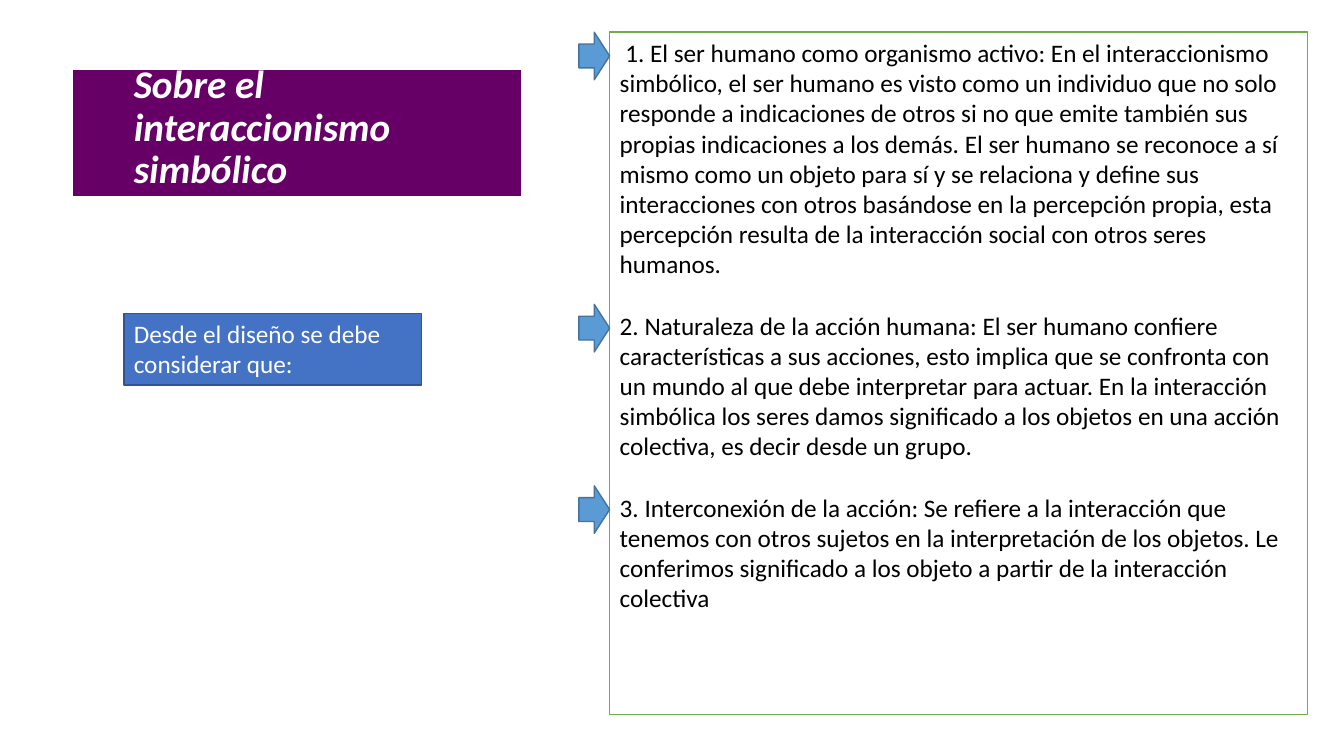
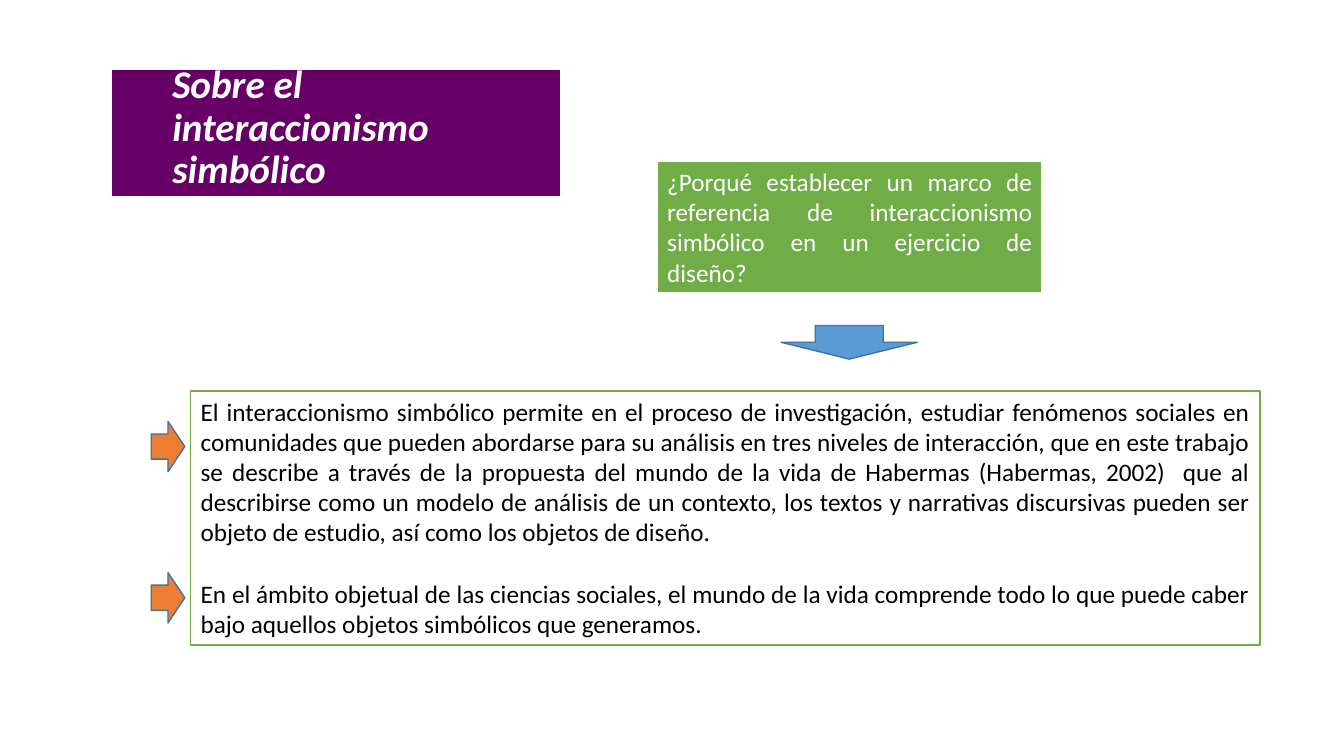
import pptx
import pptx.util
import pptx.dml.color
import pptx.enum.shapes
import pptx.enum.text

Pt = pptx.util.Pt
Kind = pptx.enum.shapes.MSO_SHAPE
Align = pptx.enum.text.PP_ALIGN
Anchor = pptx.enum.text.MSO_ANCHOR


class Theme:
    font = "Calibri"
    head, body = 28, 18
    white, black = "FFFFFF", "000000"
    purple, green = "660066", "70AD47"
    blue, navy = "4472C4", "325491"
    sky, steel, orange = "5B9BD5", "43739E", "ED7D31"
    gap = 22  # one text line between paragraphs


# Content: boxes are (left, top, width, height) in points
TITLE = "Sobre el interaccionismo simbólico"
SLIDES = [
    {
        "left": 52.5,
        "panel": (435.6, 23, 498.4, 487.5),
        "align": Align.LEFT,
        "indent": 4,
        "text": [
            "1. El ser humano como organismo activo: En el interaccionismo simbólico, el ser humano es visto como un individuo que no solo responde a indicaciones de otros si no que emite también sus propias indicaciones a los demás. El ser humano se reconoce a sí mismo como un objeto para sí y se relaciona y define sus interacciones con otros basándose en la percepción propia, esta percepción resulta de la interacción social con otros seres humanos.",
            "2. Naturaleza de la acción humana: El ser humano confiere características a sus acciones, esto implica que se confronta con un mundo al que debe interpretar para actuar. En la interacción simbólica los seres damos significado a los objetos en una acción colectiva, es decir desde un grupo.",
            "3. Interconexión de la acción: Se refiere a la interacción que tenemos con otros sujetos en la interpretación de los objetos. Le conferimos significado a los objeto a partir de la interacción colectiva",
        ],
        "note": "Desde el diseño se debe considerar que:",
        "place": (88.5, 224, 212.4, 51),
        "fill": Theme.blue,
        "edge": (Theme.navy, 1),
        "marks": [(413.5, top, 22, 34) for top in (23, 217.4, 347)],
        "tint": Theme.sky,
    },
    {
        "left": 80,
        "panel": (136.2, 279.2, 763.8, 181.6),
        "align": Align.JUSTIFY,
        "indent": 0,
        "text": [
            "El interaccionismo simbólico permite en el proceso de investigación, estudiar fenómenos sociales en comunidades que pueden abordarse para su análisis en tres niveles de interacción, que en este trabajo se describe a través de la propuesta del mundo de la vida de Habermas (Habermas, 2002)  que al describirse como un modelo de análisis de un contexto, los textos y narrativas discursivas pueden ser objeto de estudio, así como los objetos de diseño.",
            "En el ámbito objetual de las ciencias sociales, el mundo de la vida comprende todo lo que puede caber bajo aquellos objetos simbólicos que generamos.",
        ],
        "note": "¿Porqué establecer un marco de referencia de interaccionismo simbólico en un ejercicio de diseño?",
        "place": (469.5, 115.2, 275, 94),
        "fill": Theme.green,
        "edge": (Theme.white, 1.5),
        "marks": [(108, top, 24, 36) for top in (301, 409)],
        "tint": Theme.orange,
        "down": (558, 232.5, 97.2, 24),
    },
]


def tone(code):
    return pptx.dml.color.RGBColor.from_string(code)


def draw(slide, kind, box, fill, edge=None):
    shape = slide.shapes.add_shape(kind, *map(Pt, box))
    shape.shadow.inherit = False
    shape.fill.solid()
    shape.fill.fore_color.rgb = tone(fill)
    if edge:
        color, width = edge
        shape.line.color.rgb = tone(color)
        shape.line.width = Pt(width)
    else:
        shape.line.fill.background()
    return shape


def write(shape, lines, color, size=Theme.body, align=Align.LEFT,
          anchor=Anchor.TOP, strong=False):
    frame = shape.text_frame
    frame.word_wrap = True
    frame.vertical_anchor = anchor
    for i, line in enumerate(lines):
        para = frame.add_paragraph() if i else frame.paragraphs[0]
        para.alignment = align
        para.space_before = Pt(Theme.gap if i else 0)
        run = para.add_run()
        run.text = line
        font = run.font
        font.name, font.size = Theme.font, Pt(size)
        font.bold = font.italic = strong
        font.color.rgb = tone(color)
    return frame


def title(slide, left):
    draw(slide, Kind.FLOWCHART_PROCESS, (left, 49.7, 319.7, 90), Theme.purple)
    box = slide.shapes.add_textbox(Pt(left + 36), Pt(42.5), Pt(266.4), Pt(98.6))
    frame = write(box, [TITLE], Theme.white, Theme.head,
                  anchor=Anchor.MIDDLE, strong=True)
    frame.paragraphs[0].line_spacing = 0.9


def build(deck, data):
    slide = deck.slides.add_slide(deck.slide_layouts[6])
    title(slide, data["left"])

    # Main text panel
    panel = draw(slide, Kind.RECTANGLE, data["panel"], Theme.white,
                 (Theme.green, 1))
    frame = write(panel, data["text"], Theme.black, align=data["align"])
    if data["indent"]:
        first = frame.paragraphs[0]._p.get_or_add_pPr()
        first.set("indent", str(Pt(data["indent"])))

    # Coloured note
    note = draw(slide, Kind.RECTANGLE, data["place"], data["fill"],
                data["edge"])
    write(note, [data["note"]], Theme.white, align=data["align"])

    # Arrows
    rim = (Theme.steel, 1)
    if "down" in data:
        draw(slide, Kind.DOWN_ARROW, data["down"], Theme.sky, rim)
    for mark in data["marks"]:
        draw(slide, Kind.RIGHT_ARROW, mark, data["tint"], rim)


def main():
    deck = pptx.Presentation()
    deck.slide_width, deck.slide_height = Pt(960), Pt(540)
    for data in SLIDES:
        build(deck, data)
    deck.save("out.pptx")


if __name__ == "__main__":
    main()
